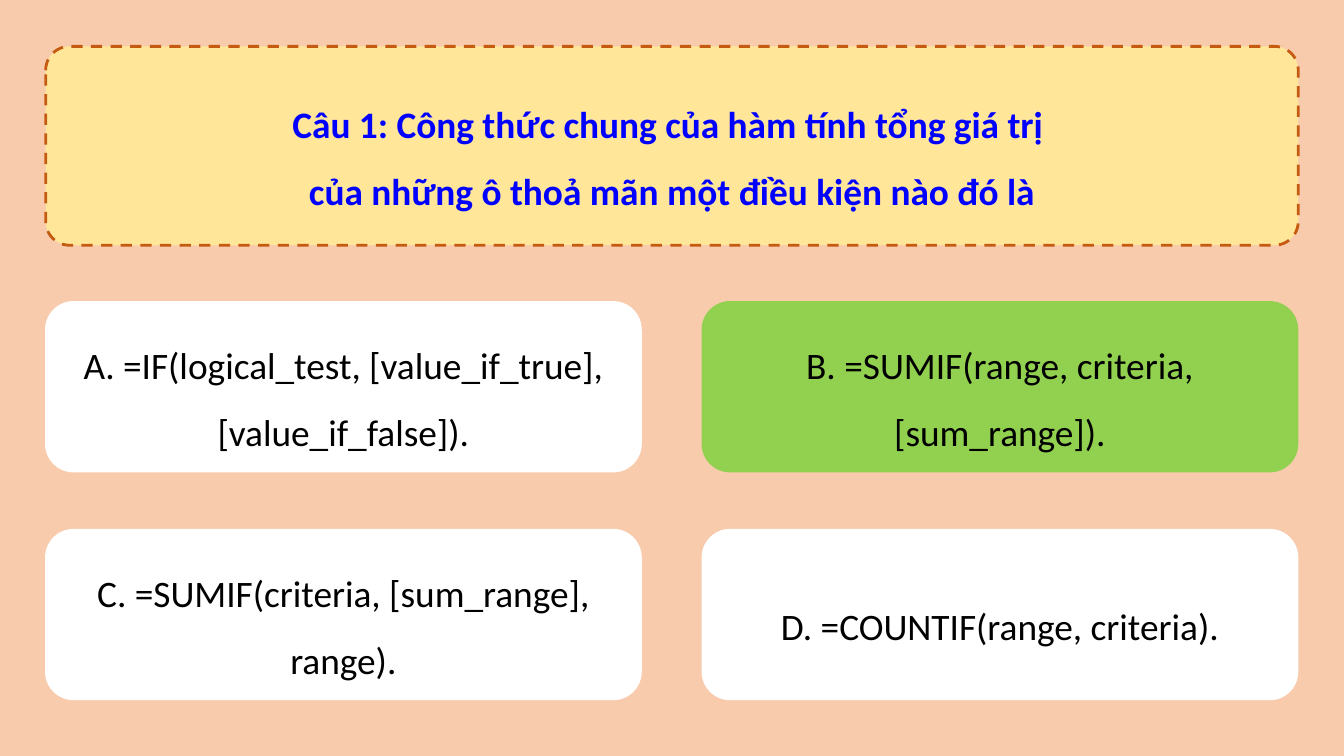
"""Build a quiz slide with one question and four answer cards."""
from pptx import Presentation
from pptx import util as u
from pptx.dml.color import RGBColor
from pptx.enum import dml, shapes, text

WIDTH, HEIGHT = 20, 11.25
PEACH = "F8CBAD"
LEFT, TOP = 0.67, 4.48
CARD_WIDTH, CARD_HEIGHT = 8.88, 2.55
COLUMN_STEP, ROW_STEP = 9.77, 3.39
ANSWERS = [
    "A. =IF(logical_test, [value_if_true], [value_if_false]).",
    "B. =SUMIF(range, criteria, [sum_range]).",
    "C. =SUMIF(criteria, [sum_range], range).",
    "D. =COUNTIF(range, criteria).",
]
CORRECT = 1


def color(value):
    return RGBColor.from_string(value)


def write(shape, lines, size=40, font="Calibri", ink="000000", bold=False, spacing=1.5):
    frame = shape.text_frame
    frame.word_wrap = True
    frame.vertical_anchor = text.MSO_ANCHOR.MIDDLE
    for index, line in enumerate(lines):
        para = frame.add_paragraph() if index else frame.paragraphs[0]
        para.alignment = text.PP_ALIGN.CENTER
        para.line_spacing = spacing
        span = para.add_run()
        span.text = line
        span.font.size = u.Pt(size)
        span.font.name = font
        span.font.bold = bold
        span.font.color.rgb = color(ink)


class QuizPage:
    def __init__(self, page):
        self.page = page

    def background(self, fill):
        self.page.background.fill.solid()
        self.page.background.fill.fore_color.rgb = color(fill)
        self.box(0, 0, WIDTH, HEIGHT, fill, shapes.MSO_SHAPE.RECTANGLE)

    def box(self, left, top, width, height, fill, kind=shapes.MSO_SHAPE.ROUNDED_RECTANGLE):
        box = self.page.shapes.add_shape(kind, *map(u.Inches, (left, top, width, height)))
        box.shadow.inherit = False
        box.fill.solid()
        box.fill.fore_color.rgb = color(fill)
        box.line.fill.background()
        return box

    def question(self, lines):
        box = self.box(0.68, 0.69, 18.64, 2.96, "FFE699")
        box.adjustments[0] = 0.12
        box.line.color.rgb = color("C55A11")
        box.line.width = u.Pt(3)
        box.line.dash_style = dml.MSO_LINE.DASH
        write(box, lines, ink="0000FF", bold=True)

    def answer(self, index, line):
        row, column = divmod(index, 2)
        fill = "92D050" if index == CORRECT else "FFFFFF"
        box = self.box(LEFT + column * COLUMN_STEP, TOP + row * ROW_STEP,
                       CARD_WIDTH, CARD_HEIGHT, fill)
        write(box, [line])


def main():
    deck = Presentation()
    deck.slide_width, deck.slide_height = u.Inches(WIDTH), u.Inches(HEIGHT)
    quiz = QuizPage(deck.slides.add_slide(deck.slide_layouts[6]))
    quiz.background(PEACH)
    quiz.question([
        "Câu 1: Công thức chung của hàm tính tổng giá trị ",
        "của những ô thoả mãn một điều kiện nào đó là",
    ])
    for index, line in enumerate(ANSWERS):
        quiz.answer(index, line)
    deck.save("out.pptx")


if __name__ == "__main__":
    main()
